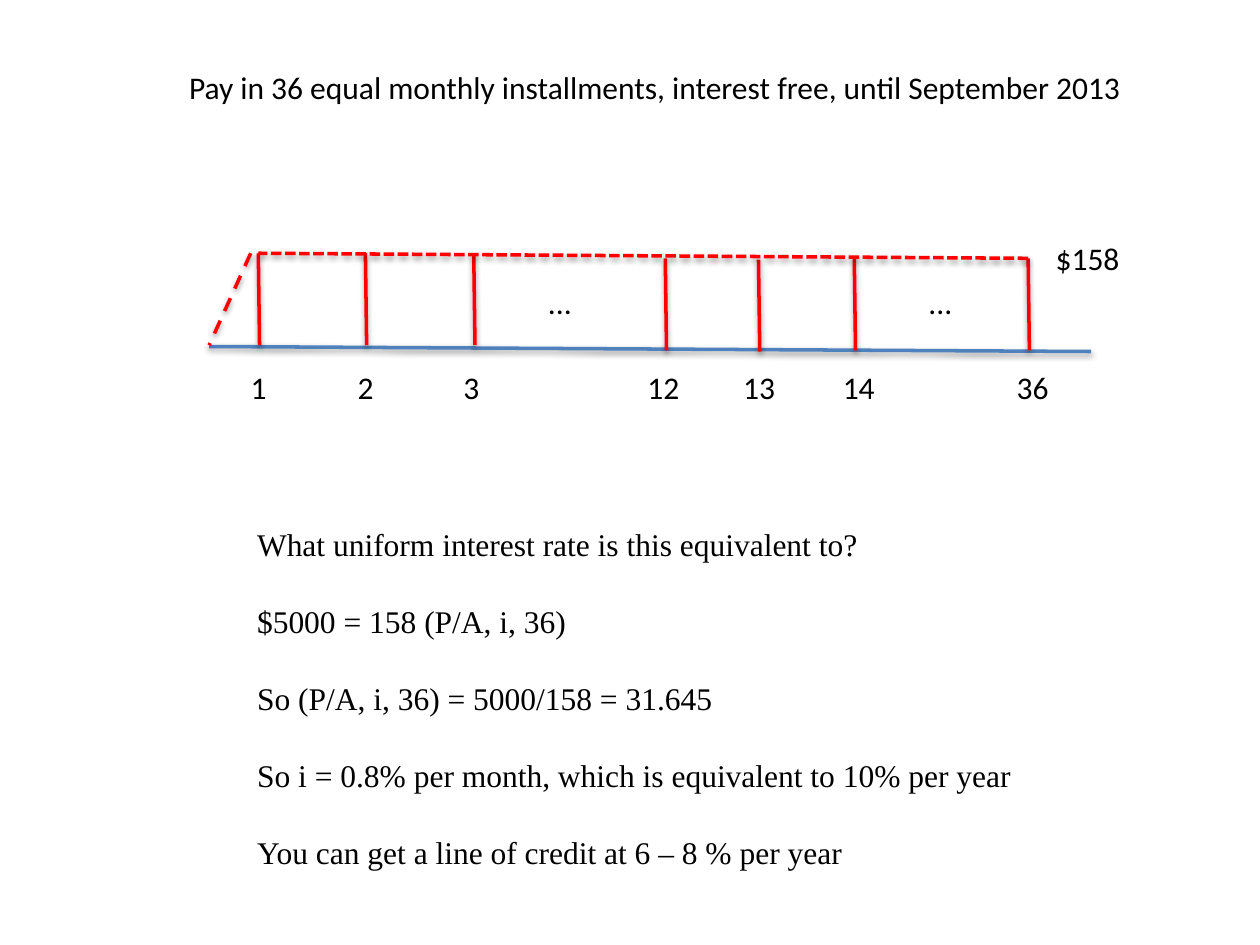
"""Build a slide with a cash flow diagram of 36 monthly installments."""
from lxml import etree
from pptx import Presentation
from pptx.dml.color import RGBColor
from pptx.enum.dml import MSO_LINE
from pptx.enum.shapes import MSO_CONNECTOR
from pptx.enum.text import MSO_ANCHOR, MSO_AUTO_SIZE, PP_ALIGN
from pptx.oxml.ns import qn
from pptx.util import Inches, Pt

STRAIGHT = MSO_CONNECTOR.STRAIGHT
SHORT_DASH, LONG_DASH = MSO_LINE.SQUARE_DOT, MSO_LINE.DASH
LEFT, TOP, FIXED = PP_ALIGN.LEFT, MSO_ANCHOR.TOP, MSO_AUTO_SIZE.NONE
COLORS = {"axis": "4F81BD", "payment": "FF0000", "text": "000000"}

presentation = Presentation()
presentation.slide_width, presentation.slide_height = Inches(10), Inches(7.5)
column = presentation.slide_width / 100
row = presentation.slide_height / 75
slide = presentation.slides.add_slide(presentation.slide_layouts[1])


def add_line(start, end, color, dash=None):
    line = slide.shapes.add_connector(
        STRAIGHT,
        int(start[0] * column), int(start[1] * row),
        int(end[0] * column), int(end[1] * row),
    ).line
    line.color.rgb = RGBColor.from_string(COLORS[color])
    line.width = Pt(2)
    if dash:
        line.dash_style = dash


def write_text(shape, box, lines, font_name="Calibri", gap=0):
    shape.left, shape.width = int(box[0] * column), int(box[2] * column)
    shape.top, shape.height = int(box[1] * row), int(box[3] * row)
    frame = shape.text_frame
    frame.text = "\n".join(lines)
    frame_format = {"word_wrap": False, "auto_size": FIXED, "vertical_anchor": TOP}
    for name, value in frame_format.items():
        setattr(frame, name, value)
    paragraph_format = {"alignment": LEFT, "space_before": Pt(0), "space_after": Pt(gap)}
    font_format = {"name": font_name, "size": Pt(18)}
    for paragraph in frame.paragraphs:
        for name, value in paragraph_format.items():
            setattr(paragraph, name, value)
        for run in paragraph.runs:
            for name, value in font_format.items():
                setattr(run.font, name, value)
            run.font.color.rgb = RGBColor.from_string(COLORS["text"])


write_text(
    slide.shapes.title, (14, 4.9, 77.8, 7.1),
    ["Pay in 36 equal monthly installments, interest free, until September 2013"],
)

body = slide.placeholders[1]
write_text(
    body, (19.4, 41.2, 62.5, 28.3),
    [
        "What uniform interest rate is this equivalent to?",
        "$5000 = 158 (P/A, i, 36)",
        "So (P/A, i, 36) = 5000/158 = 31.645",
        "So i = 0.8% per month, which is equivalent to 10% per year",
        "You can get a line of credit at 6 – 8 % per year",
    ],
    font_name="Times New Roman", gap=22.4,
)
for paragraph in body.text_frame.paragraphs:
    properties = paragraph._p.get_or_add_pPr()
    properties.set("marL", "0")
    properties.set("indent", "0")
    etree.SubElement(properties, qn("a:buNone"))

add_line((16.6, 27.5), (86.6, 27.9), "axis")

payments = [
    ("1", 20.6, 27.4, 18.9),
    ("2", 29.1, 27.4, 27.4),
    ("3", 37.7, 27.4, 35.8),
    ("12", 52.9, 27.8, 50.4),
    ("13", 60.3, 27.9, 58),
    ("14", 67.9, 27.8, 65.9),
    ("36", 81.7, 27.8, 79.7),
]
for month, foot, base, label_left in payments:
    add_line((foot, base), (foot - 0.1, base - 7.3), "payment")
    label = slide.shapes.add_textbox(0, 0, 0, 0)
    write_text(label, (label_left, 28.7, 4.8, 4), [month])

add_line((81.6, 20.5), (20.5, 20.1), "payment", SHORT_DASH)
add_line((19.9, 20.1), (16.6, 27.4), "payment", LONG_DASH)

for note, left, top, width in [
    ("...", 42.5, 22, 3.9), ("...", 72.7, 22, 3.9), ("$158", 82.8, 18.5, 7.1),
]:
    write_text(slide.shapes.add_textbox(0, 0, 0, 0), (left, top, width, 4), [note])

presentation.save("out.pptx")
